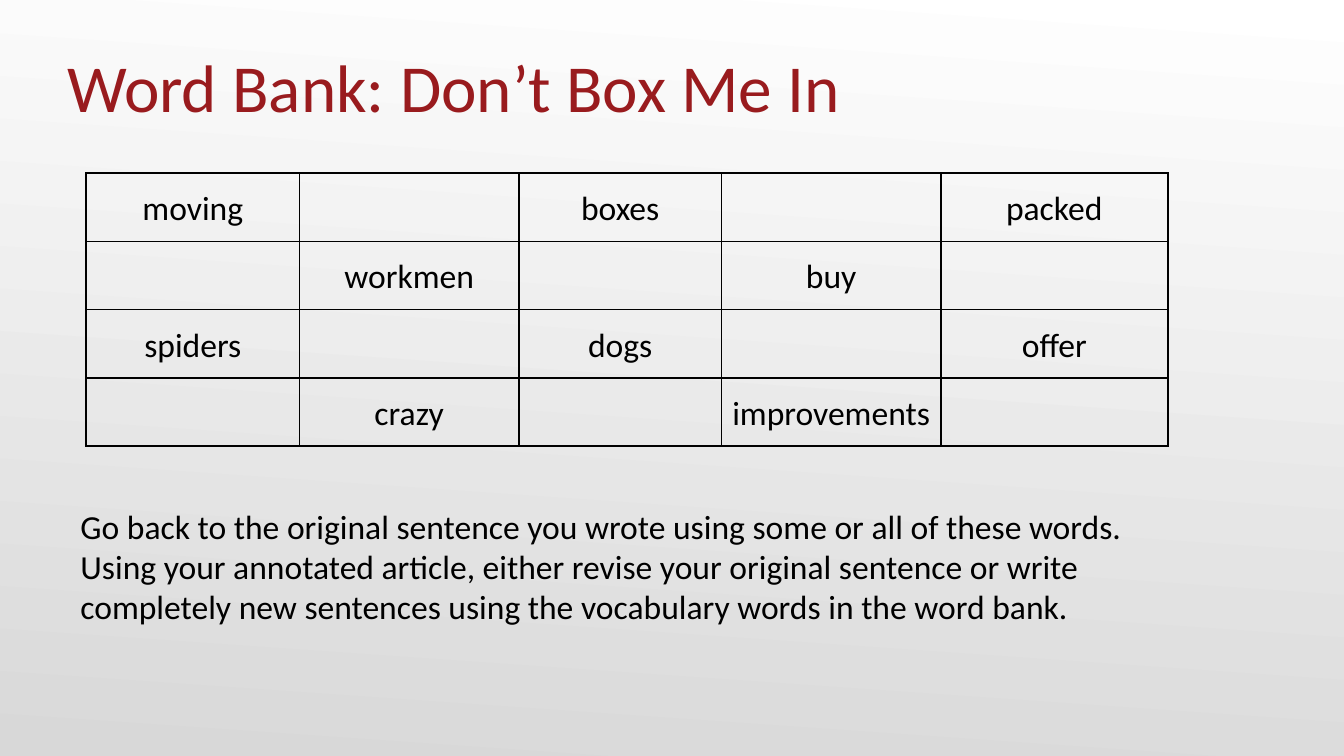
from lxml.etree import fromstring
from pptx import Presentation
from pptx.dml.color import RGBColor
from pptx.enum.text import MSO_ANCHOR, PP_ALIGN
from pptx.util import Inches, Pt

WIDTH = 10
HEIGHT = WIDTH * 9 / 16
FONT = "Calibri"
COLORS = {
    "title": "991B1E",
    "text": "000000",
    "border": "000000",
    "background_top": "FFFFFF",
    "background_bottom": "D8D8D8",
}
DRAWING = "http://schemas.openxmlformats.org/drawingml/2006/main"

# Left, top, width and height as percentages of the slide
TITLE_BOX = (5, 0, 90, 16.7)
WORD_BANK_BOX = (6.4, 22.9, 80.5, 36.1)
TASK_BOX = (5, 65.1, 81.9, 20.4)

COLUMN_WIDTHS = [1.59, 1.63, 1.51, 1.63, 1.69]
WORD_ROWS = [
    ["moving", "boxes", "packed"],
    ["workmen", "buy"],
    ["spiders", "dogs", "offer"],
    ["crazy", "improvements"],
]
TITLE = "Word Bank: Don’t Box Me In"
TASK = (
    "Go back to the original sentence you wrote using some or all of these words. "
    "Using your annotated article, either revise your original sentence or write "
    "completely new sentences using the vocabulary words in the word bank."
)


def place(box):
    return [Inches(share * length / 100)
            for share, length in zip(box, (WIDTH, HEIGHT) * 2)]


def set_margins(target, margins):
    (target.margin_left, target.margin_top,
     target.margin_right, target.margin_bottom) = map(Inches, margins)


def add_run(paragraph, text, size, color):
    run = paragraph.add_run()
    run.text = text
    run.font.name = FONT
    run.font.size = Pt(size)
    run.font.color.rgb = RGBColor.from_string(COLORS[color])


def add_text(slide, box, text, size, color, margins, anchor):
    frame = slide.shapes.add_textbox(*place(box)).text_frame
    frame.word_wrap = True
    frame.vertical_anchor = anchor
    set_margins(frame, margins)
    add_run(frame.paragraphs[0], text, size, color)


def add_borders(cell):
    properties = cell._tc.get_or_add_tcPr()
    for position, side in enumerate("LRTB"):
        properties.insert(position, fromstring(
            f'<a:ln{side} xmlns:a="{DRAWING}" w="{Pt(1)}"><a:solidFill>'
            f'<a:srgbClr val="{COLORS["border"]}"/></a:solidFill></a:ln{side}>'))


def add_word_bank(slide, box):
    left, top, width, height = place(box)
    table = slide.shapes.add_table(
        len(WORD_ROWS), len(COLUMN_WIDTHS), left, top, width, height).table
    table.first_row = table.horz_banding = False
    for column, share in zip(table.columns, COLUMN_WIDTHS):
        column.width = int(width * share / sum(COLUMN_WIDTHS))

    for cell in table.iter_cells():
        cell.fill.background()
        set_margins(cell, [0.07] * 4)
        add_borders(cell)

    # Words fill alternate cells, like a checkerboard
    for row, words in enumerate(WORD_ROWS):
        for index, word in enumerate(words):
            cell = table.cell(row, row % 2 + 2 * index)
            paragraph = cell.text_frame.paragraphs[0]
            paragraph.alignment = PP_ALIGN.CENTER
            paragraph.line_spacing = 1.15
            add_run(paragraph, word, 18, "text")


def set_background(slide):
    fill = slide.background.fill
    fill.gradient()
    fill.gradient_angle = 266
    for stop, position, color in zip(
            fill.gradient_stops, (0, 1), ("background_top", "background_bottom")):
        stop.position = position
        stop.color.rgb = RGBColor.from_string(COLORS[color])


def main():
    presentation = Presentation()
    presentation.slide_width = Inches(WIDTH)
    presentation.slide_height = Inches(HEIGHT)
    slide = presentation.slides.add_slide(presentation.slide_layouts[6])

    set_background(slide)
    # Title
    add_text(slide, TITLE_BOX, TITLE, 36, "title", (0, 0.05, 0, 0), MSO_ANCHOR.BOTTOM)
    # Word grid
    add_word_bank(slide, WORD_BANK_BOX)
    # Writing task
    add_text(slide, TASK_BOX, TASK, 18, "text", [0.1] * 4, MSO_ANCHOR.TOP)

    presentation.save("out.pptx")


if __name__ == "__main__":
    main()
